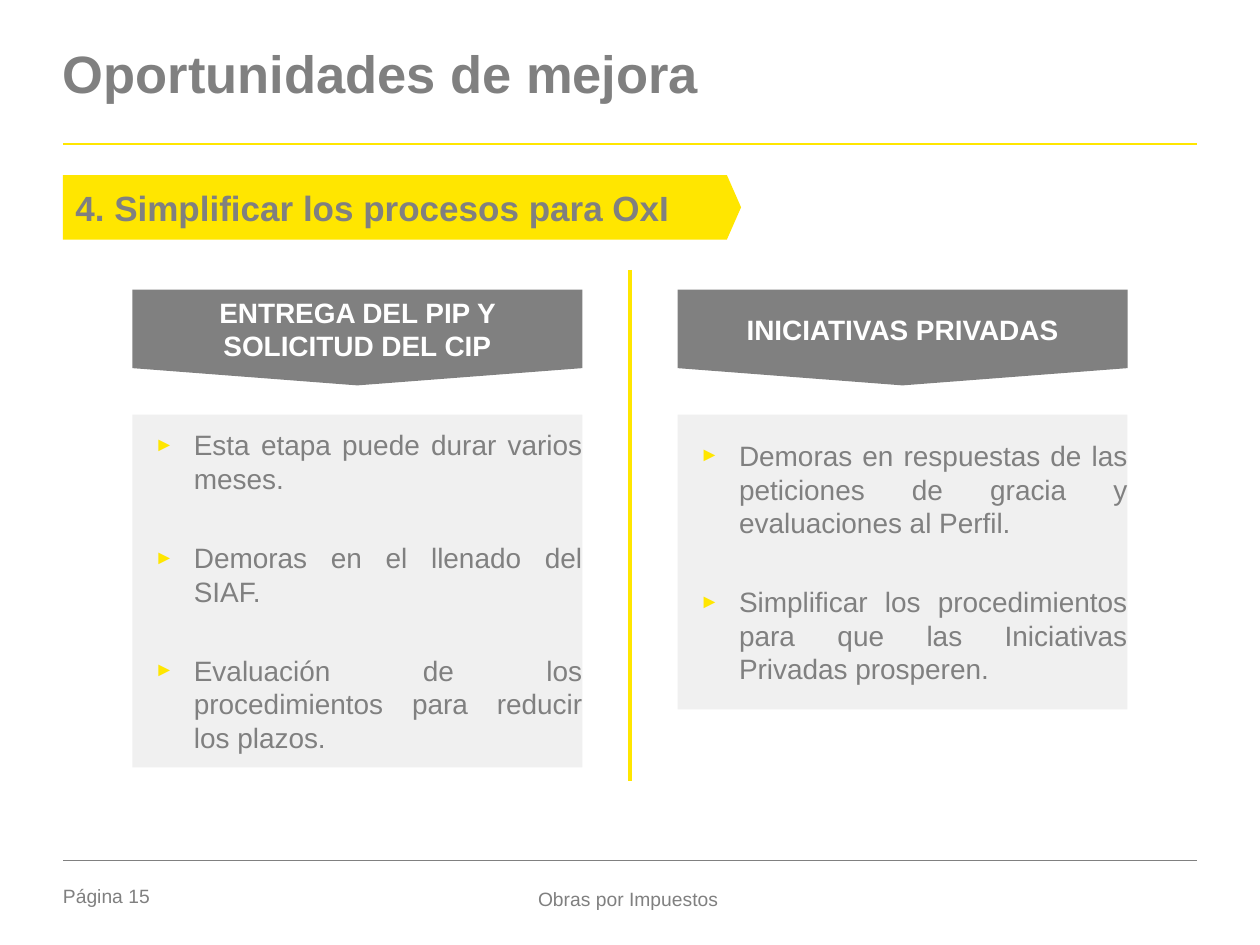
from dataclasses import dataclass
from typing import Optional

from lxml.etree import SubElement
from pptx import Presentation
from pptx.dml.color import RGBColor
from pptx.enum.shapes import MSO_CONNECTOR, MSO_SHAPE
from pptx.enum.text import MSO_ANCHOR, PP_ALIGN
from pptx.oxml.ns import qn
from pptx.util import Cm, Pt

COLORS = {
    "gray": "808080",
    "yellow": "FFE600",
    "panel": "F0F0F0",
    "white": "FFFFFF",
}
FONT = "Arial"
MARGIN, RIGHT = 1.27, 24.13
COLUMN_WIDTH = 9.07
HEADER_TOP, HEADER_HEIGHT = 5.84, 1.93
PANEL_TOP = 8.36


@dataclass
class Column:
    left: float
    heading: str
    panel_height: float
    bullets: list[str]


@dataclass
class Rule:
    start: tuple[float, float]
    end: tuple[float, float]
    color: str
    width: float


COLUMNS = [
    Column(2.67, "ENTREGA DEL PIP Y SOLICITUD DEL CIP", 7.11, [
        "Esta etapa puede durar varios meses.",
        "Demoras en el llenado del SIAF.",
        "Evaluación de los procedimientos para reducir los plazos.",
    ]),
    Column(13.66, "INICIATIVAS PRIVADAS", 5.94, [
        "Demoras en respuestas de las peticiones de gracia y evaluaciones al Perfil.",
        "Simplificar los procedimientos para que las Iniciativas Privadas prosperen.",
    ]),
]

RULES = [
    Rule((MARGIN, 2.9), (RIGHT, 2.9), "yellow", 1.5),
    Rule((MARGIN, 17.35), (RIGHT, 17.35), "gray", 0.25),
    Rule((12.7, 5.44), (12.7, 15.75), "yellow", 2.25),
]


def rgb(name: str) -> RGBColor:
    return RGBColor.from_string(COLORS[name])


def write_text(shape, *texts: str, size: float, color: str = "gray", bold: bool = False,
               align=PP_ALIGN.LEFT, anchor=MSO_ANCHOR.MIDDLE, inset: bool = True,
               line_spacing: Optional[float] = None, bullets: bool = False) -> None:
    """Fill a shape with one paragraph per text."""
    frame = shape.text_frame
    frame.word_wrap = True
    frame.vertical_anchor = anchor
    if not inset:
        frame.margin_left = frame.margin_right = frame.margin_top = frame.margin_bottom = 0
    for index, text in enumerate(texts):
        paragraph = frame.add_paragraph() if index else frame.paragraphs[0]
        paragraph.alignment = align
        if line_spacing:
            paragraph.line_spacing = line_spacing
        if bullets:
            paragraph.space_before = Pt(26 if index else 3)
            add_bullet(paragraph)
        run = paragraph.add_run()
        run.text = text
        run.font.name = FONT
        run.font.size = Pt(size)
        run.font.bold = bold
        run.font.color.rgb = rgb(color)


def add_bullet(paragraph) -> None:
    """Give a paragraph a small yellow triangle and a hanging indent."""
    properties = paragraph._p.get_or_add_pPr()
    properties.set("marL", str(Cm(1.24)))
    properties.set("indent", str(Cm(-0.79)))
    bullet_color = SubElement(properties, qn("a:buClr"))
    SubElement(bullet_color, qn("a:srgbClr"), val=COLORS["yellow"])
    SubElement(properties, qn("a:buSzPct"), val="70000")
    SubElement(properties, qn("a:buFont"), typeface=FONT)
    SubElement(properties, qn("a:buChar"), char="►")


def add_block(slide, kind, left: float, top: float, width: float, height: float,
              fill: str, adjustments: tuple[float, ...] = ()):
    shape = slide.shapes.add_shape(kind, Cm(left), Cm(top), Cm(width), Cm(height))
    shape.shadow.inherit = False
    shape.fill.solid()
    shape.fill.fore_color.rgb = rgb(fill)
    shape.line.fill.background()
    for index, value in enumerate(adjustments):
        shape.adjustments[index] = value
    return shape


def add_label(slide, text: str, left: float, top: float, width: float, height: float,
              **text_format) -> None:
    box = slide.shapes.add_textbox(Cm(left), Cm(top), Cm(width), Cm(height))
    write_text(box, text, inset=False, **text_format)


def add_rule(slide, rule: Rule) -> None:
    points = [Cm(value) for value in (*rule.start, *rule.end)]
    connector = slide.shapes.add_connector(MSO_CONNECTOR.STRAIGHT, *points)
    connector.line.color.rgb = rgb(rule.color)
    connector.line.width = Pt(rule.width)
    SubElement(connector._element.spPr, qn("a:effectLst"))


def add_column(slide, column: Column) -> None:
    panel = add_block(slide, MSO_SHAPE.RECTANGLE, column.left, PANEL_TOP,
                      COLUMN_WIDTH, column.panel_height, "panel")
    write_text(panel, *column.bullets, size=16, align=PP_ALIGN.JUSTIFY,
               inset=False, bullets=True)
    header = add_block(slide, MSO_SHAPE.DOWN_ARROW, column.left, HEADER_TOP,
                       COLUMN_WIDTH, HEADER_HEIGHT, "gray", (1, 0.18))
    write_text(header, column.heading, size=16, color="white", bold=True,
               align=PP_ALIGN.CENTER)


def main() -> None:
    presentation = Presentation()
    presentation.slide_width, presentation.slide_height = Cm(25.4), Cm(19.05)
    slide = presentation.slides.add_slide(presentation.slide_layouts[6])

    # Title and rules
    add_label(slide, "Oportunidades de mejora", MARGIN, 1.02, RIGHT - MARGIN, 2.39,
              size=30, bold=True, anchor=MSO_ANCHOR.TOP, line_spacing=0.85)
    for rule in RULES:
        add_rule(slide, rule)

    # Section banner
    banner = add_block(slide, MSO_SHAPE.PENTAGON, MARGIN, 3.53, 13.67, 1.3,
                       "yellow", (0.22,))
    write_text(banner, "4. Simplificar los procesos para OxI", size=20, bold=True,
               align=PP_ALIGN.JUSTIFY)

    # Two columns
    for column in COLUMNS:
        add_column(slide, column)

    # Footer
    add_label(slide, "Página 15", MARGIN, 17.83, 2.01, 0.56, size=11,
              anchor=MSO_ANCHOR.TOP)
    add_label(slide, "Obras por Impuestos", 8.69, 17.83, 7.95, 0.56, size=11,
              align=PP_ALIGN.CENTER)

    presentation.save("out.pptx")


if __name__ == "__main__":
    main()
